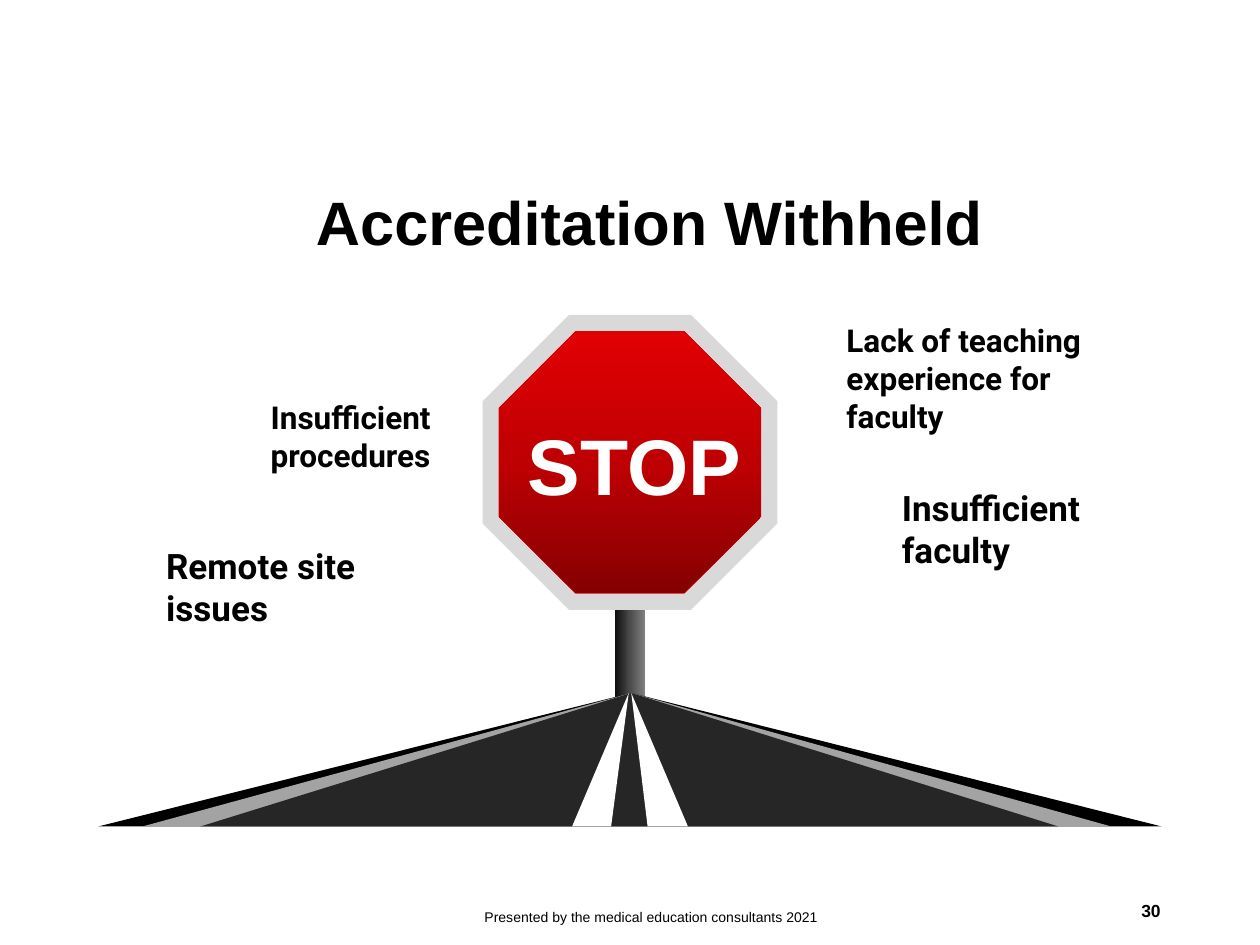
from copy import deepcopy
from dataclasses import dataclass

from pptx import Presentation
from pptx.dml.color import RGBColor
from pptx.enum.shapes import MSO_SHAPE
from pptx.enum.text import MSO_ANCHOR, PP_ALIGN
from pptx.oxml.ns import qn
from pptx.util import Inches, Pt

RECTANGLE, OCTAGON = MSO_SHAPE.RECTANGLE, MSO_SHAPE.OCTAGON
TOP, MIDDLE = MSO_ANCHOR.TOP, MSO_ANCHOR.MIDDLE
LEFT, CENTER, RIGHT = PP_ALIGN.LEFT, PP_ALIGN.CENTER, PP_ALIGN.RIGHT


@dataclass(frozen=True)
class Theme:
    heading_font: str = "Arial"
    reason_font: str = "Roboto"
    title_size: int = 35
    stop_size: int = 45
    reason_size: int = 18
    large_reason_size: int = 20
    footer_size: int = 8
    number_size: int = 10
    black: str = "000000"
    white: str = "FFFFFF"
    sign_rim: str = "D9D9D9"
    sign_edge: str = "E10003"
    sign_face: tuple = ("850002", "BE0003", "E10003")
    post: tuple = ("0D0D0D", "4B4B4B", "808080")
    shoulder: str = "A3A3A3"
    asphalt: str = "262626"


THEME = Theme()


def add_text(slide, box, text, size, font=THEME.heading_font, bold=True,
             color=THEME.black, align=LEFT, anchor=MIDDLE, wrap=True, indent=0):
    frame = slide.shapes.add_textbox(*map(Inches, box)).text_frame
    frame.word_wrap = wrap
    frame.vertical_anchor = anchor
    paragraph = frame.paragraphs[0]
    paragraph.text = text
    paragraph.alignment = align
    if indent:
        paragraph._p.get_or_add_pPr().set("marL", str(Inches(indent)))
    paragraph.font.name = font
    paragraph.font.size = Pt(size)
    paragraph.font.bold = bold
    paragraph.font.color.rgb = RGBColor.from_string(color)
    return paragraph


def paint(shape, color):
    shape.shadow.inherit = False
    shape.fill.solid()
    shape.fill.fore_color.rgb = RGBColor.from_string(color)
    shape.line.fill.background()


def paint_gradient(shape, colors, angle):
    """Fill with three evenly spaced stops."""
    shape.shadow.inherit = False
    shape.line.fill.background()
    shape.fill.gradient()
    shape.fill.gradient_angle = angle
    stop_list = shape._element.spPr.find(qn("a:gradFill")).find(qn("a:gsLst"))
    stop_list.insert(1, deepcopy(stop_list[0]))
    for stop, color, position in zip(shape.fill.gradient_stops, colors, (0, 0.5, 1)):
        stop.color.rgb = RGBColor.from_string(color)
        stop.position = position


def add_stop_sign(slide, left, top, width, height):
    """Post, rim, face and lettering; the rim is as tall as it is wide."""
    post_width, post_top, margin = 0.24, 1.5, 0.13
    center = left + width / 2

    post = slide.shapes.add_shape(RECTANGLE, *map(Inches, (
        center - post_width / 2, top + post_top, post_width, height - post_top)))
    paint_gradient(post, THEME.post, 0)

    rim = slide.shapes.add_shape(OCTAGON, *map(Inches, (left, top, width, width)))
    paint(rim, THEME.sign_rim)

    face_side = width - 2 * margin
    face = slide.shapes.add_shape(OCTAGON, *map(Inches, (
        left + margin, top + margin, face_side, face_side)))
    paint_gradient(face, THEME.sign_face, 90)
    face.line.color.rgb = RGBColor.from_string(THEME.sign_edge)
    face.line.width = Pt(0.25)

    add_text(slide, (left + 0.25, top + 0.75, 1.91, 0.86), "STOP", THEME.stop_size,
             color=THEME.white, align=CENTER, wrap=False)


def add_road(slide, left, top, width, height):
    """Triangles that meet at the horizon, from the verge to the centre stripes."""
    layers = [  # horizon x, base start, base end, colour
        (4.23, 0, width, THEME.black),
        (4.23, 0.35, 8.04, THEME.shoulder),
        (4.23, 0.81, 7.62, THEME.asphalt),
        (4.21, 3.76, 4.07, THEME.white),
        (4.23, 4.36, 4.68, THEME.white),
    ]
    for horizon, start, end, color in layers:
        outline = slide.shapes.build_freeform(Inches(left + horizon), Inches(top))
        base = Inches(top + height)
        outline.add_line_segments(
            [(Inches(left + end), base), (Inches(left + start), base)], close=True)
        paint(outline.convert_to_shape(), color)


def add_reasons(slide):
    reasons = [
        ((1.55, 3.11, 2.31, 0.71), "Insufficient procedures", THEME.reason_size),
        ((6.12, 2.5, 2.73, 1.01), "Lack of teaching experience for faculty",
         THEME.reason_size),
        ((0.72, 4.27, 2.31, 0.77), "Remote site issues", THEME.large_reason_size),
        ((6.56, 3.81, 2.31, 0.77), "Insufficient faculty", THEME.large_reason_size),
    ]
    for box, reason, size in reasons:
        add_text(slide, box, reason, size, THEME.reason_font, anchor=TOP, indent=0.5)


def add_title(slide, box):
    title = add_text(slide, box, "Accreditation Withheld", THEME.title_size)
    title.line_spacing = 0.9


def add_footer(slide, presenter_box, number_box):
    add_text(slide, presenter_box, "Presented by the medical education consultants 2021",
             THEME.footer_size, bold=False, align=CENTER)
    number = add_text(slide, number_box, "30", THEME.number_size, align=RIGHT)
    number.space_after = Pt(4.5)


def main():
    deck = Presentation()
    deck.slide_width, deck.slide_height = Inches(10), Inches(7.5)
    slide = deck.slides.add_slide(deck.slide_layouts[6])

    add_reasons(slide)
    add_stop_sign(slide, 3.83, 2.5, 2.34, 4.06)
    add_road(slide, 0.78, 5.5, 8.44, 1.06)
    add_title(slide, (2.41, 0.13, 5.66, 3.33))
    add_footer(slide, (3.48, 7.08, 3.38, 0.4), (7.06, 7.08, 2.25, 0.3))

    deck.save("out.pptx")


if __name__ == "__main__":
    main()
